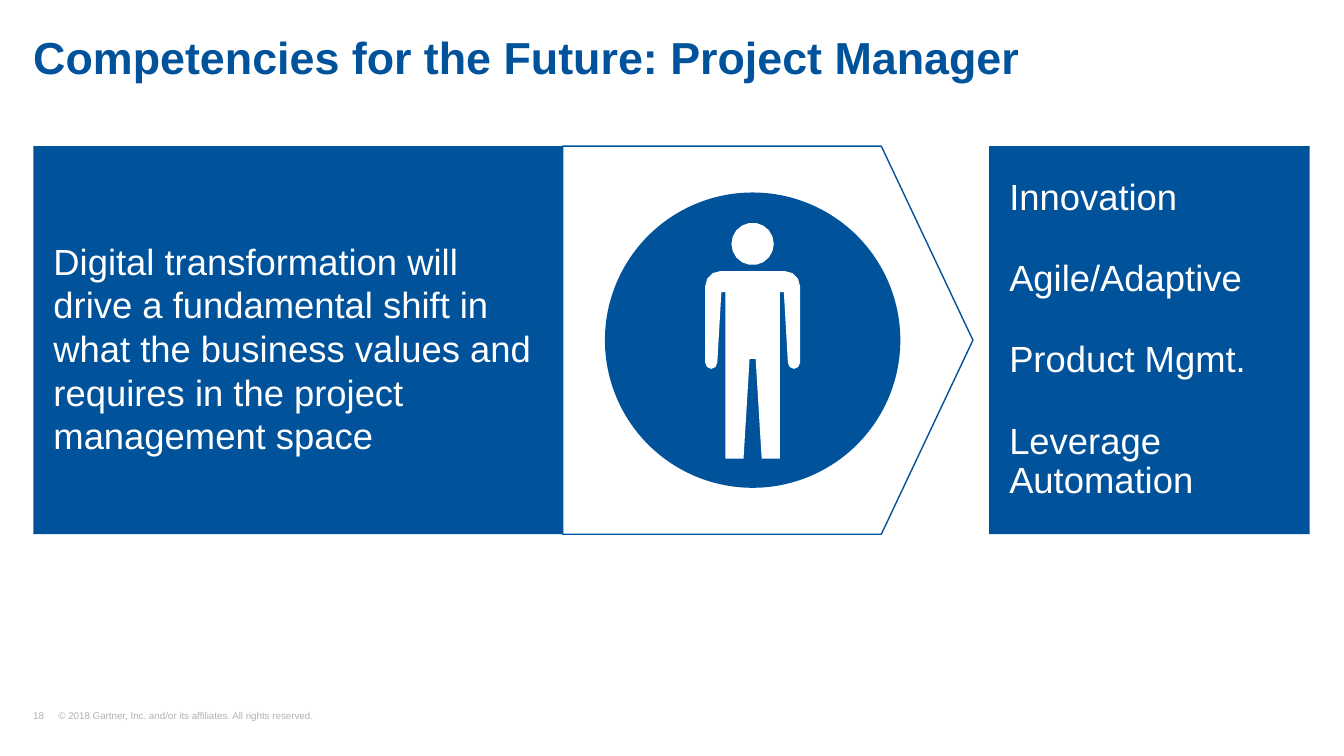
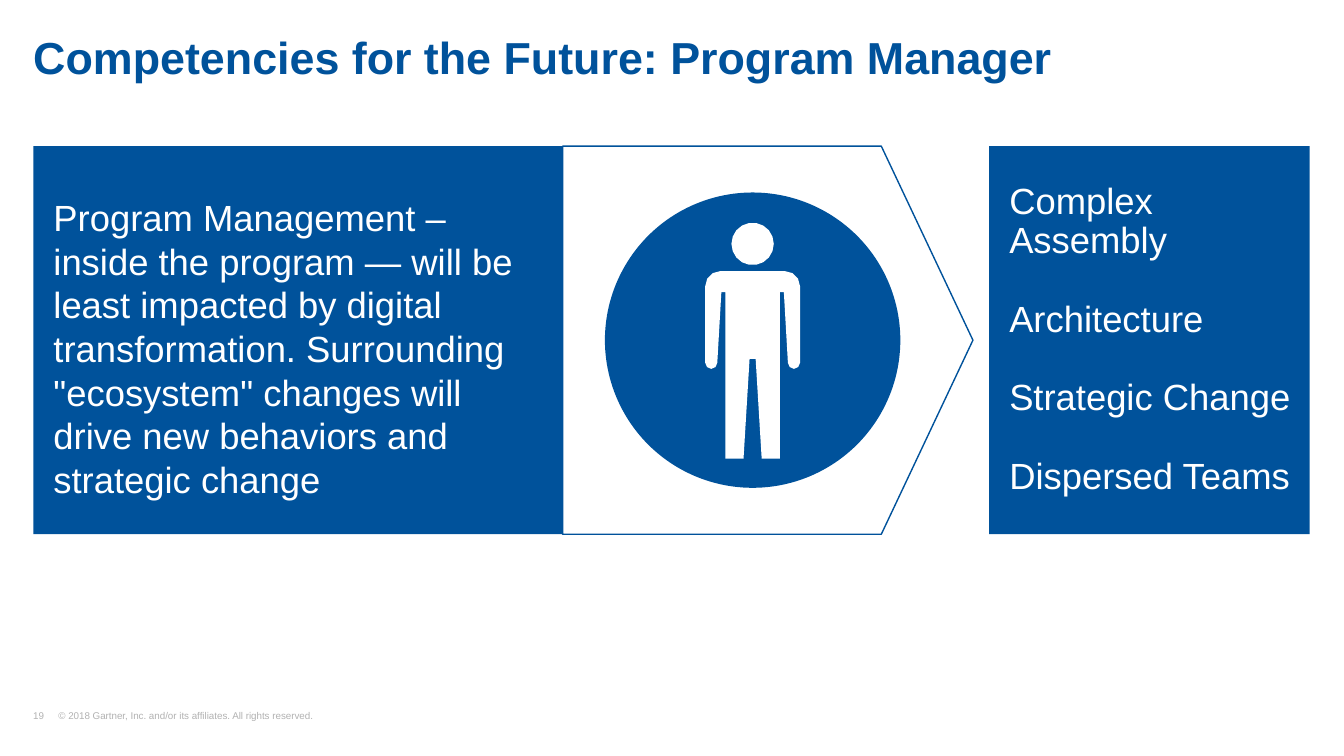
from dataclasses import dataclass
from math import cos, radians, sin

from lxml import etree
from pptx import Presentation
from pptx.dml.color import RGBColor
from pptx.enum import shapes, text
from pptx.oxml import ns
from pptx.util import Inches, Pt

COPYRIGHT = "© 2018 Gartner, Inc. and/or its affiliates. All rights reserved."
SLIDES = [
    {
        "number": 18,
        "role": "Project Manager",
        "statement": "Digital transformation will\vdrive a fundamental shift in what the "
                     "business values and requires in the project\vmanagement space",
        "skills": ["Innovation", "Agile/Adaptive", "Product Mgmt.", "Leverage Automation"],
        "skill_gap": 30,
    },
    {
        "number": 19,
        "role": "Program Manager",
        "statement": "Program Management –\vinside the program — will be least impacted by "
                     "digital transformation. Surrounding \"ecosystem\" changes will\v"
                     "drive new behaviors and strategic change",
        "skills": ["Complex Assembly", "Architecture", "Strategic Change", "Dispersed Teams"],
        "skill_gap": 28,
    },
]


@dataclass(frozen=True)
class Theme:
    blue: RGBColor = RGBColor.from_string("00529B")
    white: RGBColor = RGBColor.from_string("FFFFFF")
    grey: RGBColor = RGBColor.from_string("B2B2B2")
    font: str = "Arial"
    title: int = 32
    body: int = 26
    footer: int = 7
    tight: float = 0.9


THEME = Theme()
WIDTH, HEIGHT = 13.33, 7.5
MARGIN = 0.33
CONTENT = WIDTH - MARGIN - 0.34
BAND_TOP, BAND_HEIGHT = 1.45, 3.85
BAND_MIDDLE = BAND_TOP + BAND_HEIGHT / 2
STATEMENT_WIDTH, ARROW_WIDTH, SKILLS_WIDTH = 5.25, 4.07, 3.18
ARROW_LEFT = MARGIN + STATEMENT_WIDTH
SKILLS_LEFT = MARGIN + CONTENT - SKILLS_WIDTH
DISC_LEFT, DISC_SIZE = ARROW_LEFT + 0.42, 2.93
PERSON_X = DISC_LEFT + DISC_SIZE / 2
UNITS_PER_INCH = 1000


def arc(x, y, radius, start, end, step):
    return [(x + radius * cos(radians(a)), y + radius * sin(radians(a)))
            for a in range(start, end + 1, step)]


def person_contours():
    half = [
        *arc(0.32, 2.84, 0.15, -90, 0, 30),
        *arc(0.41, 3.6, 0.06, 0, 180, 45),
        (0.31, 2.9), (0.27, 2.9), (0.27, 4.55), (0.09, 4.55), (0.03, 3.56),
    ]
    body = half + [(-x, y) for x, y in reversed(half)]
    head = arc(0, 2.42, 0.21, 0, 340, 20)
    return [[((PERSON_X + x) * UNITS_PER_INCH, y * UNITS_PER_INCH) for x, y in contour]
            for contour in (body, head)]


def paint(shape, fill, line=None):
    shape.shadow.inherit = False
    shape.fill.solid()
    shape.fill.fore_color.rgb = fill
    if line is None:
        shape.line.fill.background()
    else:
        shape.line.color.rgb = line
        shape.line.width = Pt(1)


def add_block(page, kind, left, top, width, height, fill, line=None):
    shape = page.shapes.add_shape(kind, *map(Inches, (left, top, width, height)))
    paint(shape, fill, line)
    return shape


def add_text_box(page, left, top, width, height):
    return page.shapes.add_textbox(*map(Inches, (left, top, width, height)))


def write(shape, lines, size, color, insets, anchor, bold=False, spacing=None, gap=0):
    frame = shape.text_frame
    frame.text = "\n".join(lines)
    frame.word_wrap = True
    frame.vertical_anchor = anchor
    (frame.margin_left, frame.margin_top,
     frame.margin_right, frame.margin_bottom) = map(Inches, insets)
    for index, para in enumerate(frame.paragraphs):
        para.alignment = text.PP_ALIGN.LEFT
        if spacing:
            para.line_spacing = spacing
        if index and gap:
            para.space_before = Pt(gap)
        for span in para.runs:
            span.font.name = THEME.font
            span.font.size = Pt(size)
            span.font.bold = bold
            span.font.color.rgb = color


def add_title(page, role):
    box = add_text_box(page, MARGIN, 0.25, CONTENT, 0.59)
    write(box, [f"Competencies for the Future: {role}"], THEME.title, THEME.blue,
          (0, 0.1, 0, 0), text.MSO_ANCHOR.TOP, bold=True, spacing=THEME.tight)


def add_footer(page, number):
    box = add_text_box(page, MARGIN, 7.05, 3.23, 0.11)
    write(box, [f"{number}\t{COPYRIGHT}"], THEME.footer, THEME.grey,
          (0, 0, 0, 0), text.MSO_ANCHOR.BOTTOM, spacing=THEME.tight)
    props = box.text_frame.paragraphs[0]._p.get_or_add_pPr()
    tabs = etree.SubElement(props, ns.qn("a:tabLst"))
    etree.SubElement(tabs, ns.qn("a:tab"), pos=str(Inches(0.25)), algn="l")


def add_person(page):
    body, head = person_contours()
    builder = page.shapes.build_freeform(*body[0], scale=Inches(1) / UNITS_PER_INCH)
    builder.add_line_segments(body[1:], close=True)
    builder.move_to(*head[0])
    builder.add_line_segments(head[1:], close=True)
    paint(builder.convert_to_shape(), THEME.white)


def add_band(page, content):
    kinds = shapes.MSO_SHAPE
    statement = add_block(page, kinds.RECTANGLE, MARGIN, BAND_TOP,
                          STATEMENT_WIDTH, BAND_HEIGHT, THEME.blue)
    write(statement, [content["statement"]], THEME.body, THEME.white,
          (0.2, 0.2, 0.1, 0.05), text.MSO_ANCHOR.MIDDLE)
    arrow = add_block(page, kinds.PENTAGON, ARROW_LEFT, BAND_TOP,
                      ARROW_WIDTH, BAND_HEIGHT, THEME.white, THEME.blue)
    arrow.adjustments[0] = 0.236
    add_block(page, kinds.OVAL, DISC_LEFT, BAND_MIDDLE - DISC_SIZE / 2,
              DISC_SIZE, DISC_SIZE, THEME.blue)
    add_person(page)
    skills = add_block(page, kinds.RECTANGLE, SKILLS_LEFT, BAND_TOP,
                       SKILLS_WIDTH, BAND_HEIGHT, THEME.blue)
    write(skills, content["skills"], THEME.body, THEME.white, (0.2, 0.05, 0, 0.05),
          text.MSO_ANCHOR.MIDDLE, spacing=THEME.tight, gap=content["skill_gap"])


def main():
    deck = Presentation()
    deck.slide_width, deck.slide_height = Inches(WIDTH), Inches(HEIGHT)
    for content in SLIDES:
        page = deck.slides.add_slide(deck.slide_layouts[6])
        add_footer(page, content["number"])
        add_title(page, content["role"])
        add_band(page, content)
    deck.save("out.pptx")


if __name__ == "__main__":
    main()
